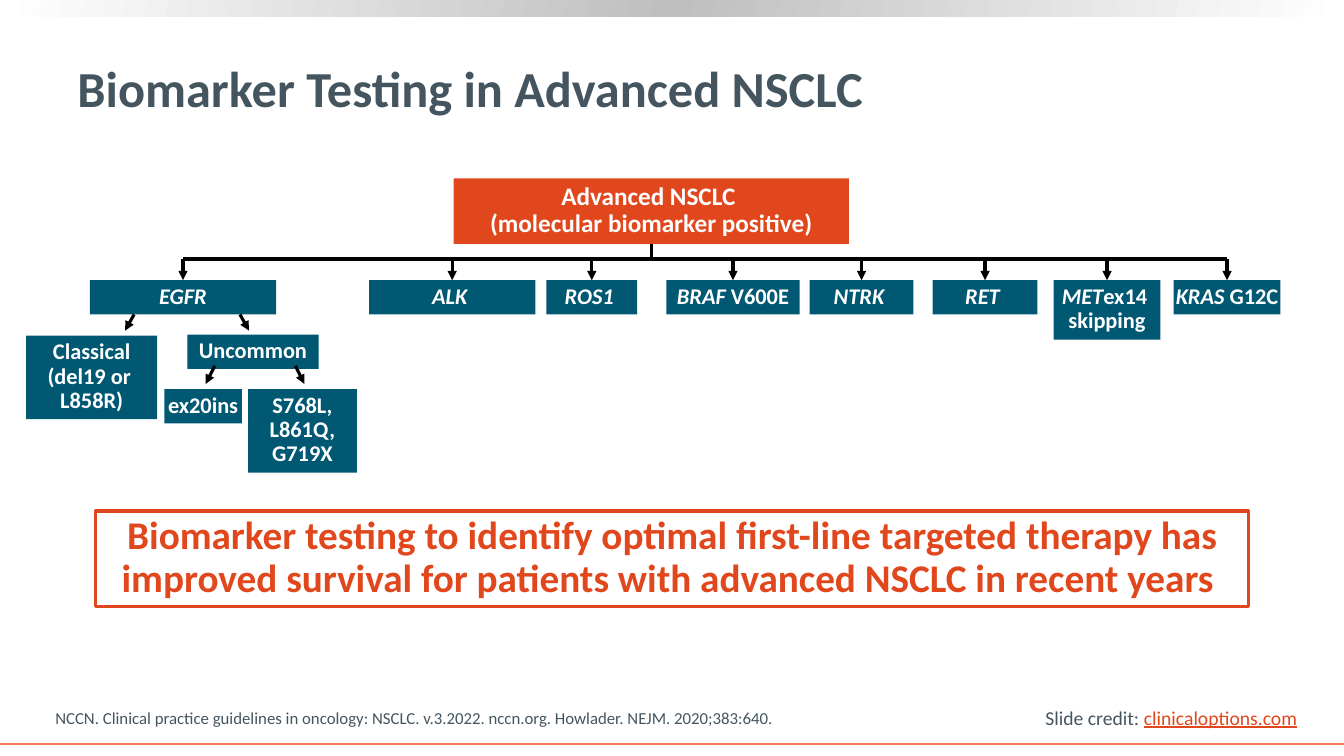
from copy import deepcopy

from lxml import etree
from pptx import Presentation
from pptx.dml.color import RGBColor
from pptx.enum.shapes import MSO_CONNECTOR, MSO_SHAPE
from pptx.enum.text import MSO_ANCHOR, MSO_AUTO_SIZE, PP_ALIGN
from pptx.oxml.ns import qn
from pptx.util import Inches, Pt

RECTANGLE = MSO_SHAPE.RECTANGLE
STRAIGHT = MSO_CONNECTOR.STRAIGHT
CENTER, LEFT = PP_ALIGN.CENTER, PP_ALIGN.LEFT
TOP, MIDDLE, BOTTOM = MSO_ANCHOR.TOP, MSO_ANCHOR.MIDDLE, MSO_ANCHOR.BOTTOM
FIT_SHAPE, NO_FIT = MSO_AUTO_SIZE.SHAPE_TO_FIT_TEXT, MSO_AUTO_SIZE.NONE

FONT = "Calibri"
COLORS = {
    "white": "FFFFFF", "silver": "BFBFBF", "black": "000000", "slate": "455560",
    "teal": "015873", "orange": "E1471D", "coral": "F47D55",
}
SLIDE_WIDTH, SLIDE_HEIGHT = 13.33, 7.5
BUS_TOP, GENE_TOP = 2.57, 2.78

TITLE = "Biomarker Testing in Advanced NSCLC"
ROOT = "Advanced NSCLC \n(molecular biomarker positive)"
MESSAGE = ("Biomarker testing to identify optimal first-line targeted therapy has "
           "improved survival for patients with advanced NSCLC in recent years ")
CITATION = ("NCCN. Clinical practice guidelines in oncology: NSCLC. v.3.2022. nccn.org. "
            "Howlader. NEJM. 2020;383:640.")
CREDIT, CREDIT_SITE = "Slide credit: ", "clinicaloptions.com"

GENES = [
    (0.89, 1.85, 0.34, "EGFR", ""),
    (3.66, 1.65, 0.34, "ALK ", ""),
    (5.42, 0.9, 0.34, "ROS1 ", ""),
    (6.61, 1.32, 0.34, "BRAF ", "V600E"),
    (8.03, 1.03, 0.34, "NTRK ", ""),
    (9.25, 1.04, 0.34, "RET ", ""),
    (10.45, 1.06, 0.59, "MET", "ex14 \nskipping"),
    (11.64, 1.06, 0.34, "KRAS", " G12C"),
]
SUBTYPES = [
    (0.26, 3.33, 1.3, 0.83, "Classical\n(del19 or \nL858R)"),
    (1.86, 3.32, 1.3, 0.34, "Uncommon"),
    (1.63, 3.86, 0.77, 0.34, "ex20ins"),
    (2.46, 3.86, 1.08, 0.83, "S768L, L861Q, G719X"),
]
BRANCHES = [
    (1.33, 3.12, 1.24, 3.28),
    (2.38, 3.12, 2.47, 3.28),
    (2.13, 3.63, 2.04, 3.81),
    (2.93, 3.63, 3.02, 3.81),
]

presentation = Presentation()
presentation.slide_width = Inches(SLIDE_WIDTH)
presentation.slide_height = Inches(SLIDE_HEIGHT)
slide = presentation.slides.add_slide(presentation.slide_layouts[6])


def color(name):
    return RGBColor.from_string(COLORS[name])


def write(shape, runs, size, align=LEFT, anchor=TOP, spacing=1.0,
          side_inset=0.1, autofit=NO_FIT, wrap=True):
    frame = shape.text_frame
    frame.word_wrap = wrap
    frame.auto_size = autofit
    frame.vertical_anchor = anchor
    frame.margin_left = frame.margin_right = Inches(side_inset)
    frame.margin_top = frame.margin_bottom = Inches(0.05)
    paragraph = frame.paragraphs[0]
    paragraph.alignment = align
    paragraph.line_spacing = spacing
    for text, ink, style in runs:
        for index, line in enumerate(text.split("\n")):
            if index:
                paragraph.add_line_break()
            run = paragraph.add_run()
            run.text = line
            run.font.name = FONT
            run.font.size = Pt(size)
            run.font.color.rgb = color(ink)
            run.font.bold = "bold" in style
            run.font.italic = "italic" in style
            run.font.underline = "underline" in style


def add_box(left, top, width, height, fill=None, outline=None):
    shape = slide.shapes.add_shape(
        RECTANGLE, Inches(left), Inches(top), Inches(width), Inches(height))
    shape.shadow.inherit = False
    if fill:
        shape.fill.solid()
        shape.fill.fore_color.rgb = color(fill)
    else:
        shape.fill.background()
    if outline:
        shape.line.color.rgb = color(outline)
        shape.line.width = Pt(2.25)
    else:
        shape.line.fill.background()
    return shape


def add_node(left, top, width, height, runs):
    shape = add_box(left, top, width, height, "teal")
    write(shape, runs, 16, CENTER, spacing=0.9, side_inset=0, autofit=FIT_SHAPE)
    return shape


def add_line(x1, y1, x2, y2, ink="black", width=2.25, arrow=False):
    line = slide.shapes.add_connector(
        STRAIGHT, Inches(x1), Inches(y1), Inches(x2), Inches(y2))
    line.line.color.rgb = color(ink)
    line.line.width = Pt(width)
    if arrow:
        etree.SubElement(line.line._get_or_add_ln(), qn("a:tailEnd"), type="triangle")
    etree.SubElement(line._element.spPr, qn("a:effectLst"))
    return line


def add_text(left, top, width, height, runs, size, **layout):
    box = slide.shapes.add_textbox(
        Inches(left), Inches(top), Inches(width), Inches(height))
    write(box, runs, size, **layout)


band = add_box(0, 0, SLIDE_WIDTH, 0.16)
band.fill.gradient()
band.fill.gradient_angle = 170
first_stop = band._element.spPr.find(".//" + qn("a:gs"))
first_stop.addnext(deepcopy(first_stop))
for stop, (position, ink) in zip(
        band.fill.gradient_stops, [(0, "white"), (0.5, "silver"), (1, "white")]):
    stop.position = position
    stop.color.rgb = color(ink)

add_line(0, 7.38, SLIDE_WIDTH, 7.38, "coral", 1.5)
add_text(10.27, 6.95, 2.72, 0.34,
         [(CREDIT, "slate", ""), (CREDIT_SITE, "orange", "underline")], 14,
         autofit=FIT_SHAPE, wrap=False)
add_text(0.67, 0.26, 12.18, 1.21, [(TITLE, "slate", "bold")], 36, anchor=MIDDLE)
add_text(0.45, 6.97, 10.32, 0.3, [(CITATION, "slate", "")], 12,
         anchor=BOTTOM, autofit=FIT_SHAPE)

message = add_box(0.95, 5.07, 11.43, 0.95, outline="orange")
write(message, [(MESSAGE, "orange", "bold")], 28, CENTER, spacing=0.9)

root = add_box(4.5, 1.77, 3.92, 0.65, "orange")
write(root, [(ROOT, "white", "bold")], 18, CENTER, spacing=0.9, autofit=FIT_SHAPE)
stem = add_line(6.46, 2.42, 6.46, BUS_TOP)
stem.begin_connect(root, 2)

centers = [left + width / 2 for left, width, *rest in GENES]
add_line(centers[0], BUS_TOP, centers[-1], BUS_TOP)
for center, (left, width, height, gene, variant) in zip(centers, GENES):
    runs = [(gene, "white", "bold italic")]
    if variant:
        runs.append((variant, "white", "bold"))
    node = add_node(left, GENE_TOP, width, height, runs)
    drop = add_line(center, BUS_TOP, center, GENE_TOP, arrow=True)
    drop.end_connect(node, 0)

for left, top, width, height, label in SUBTYPES:
    add_node(left, top, width, height, [(label, "white", "bold")])
for branch in BRANCHES:
    add_line(*branch, arrow=True)

presentation.save("out.pptx")
